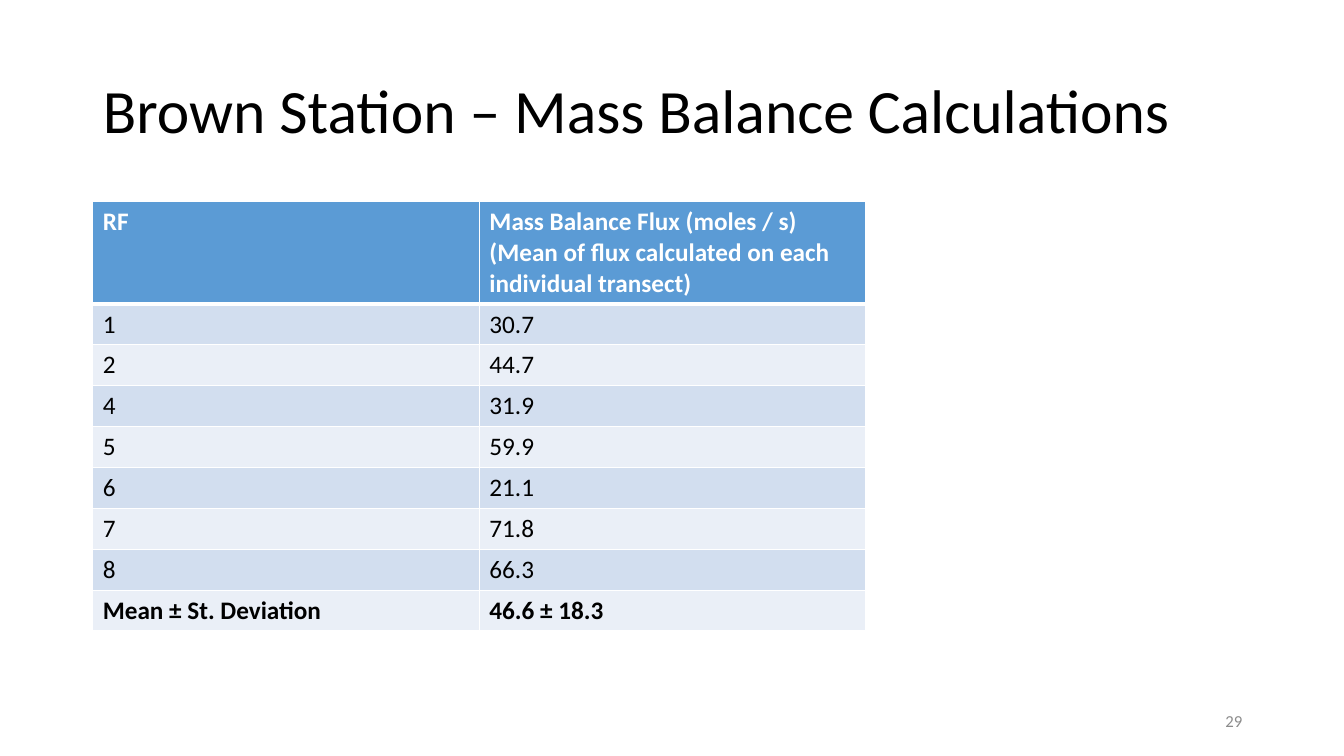
from pptx import Presentation
from pptx.dml.color import RGBColor
from pptx.enum.text import MSO_ANCHOR as Anchor, MSO_AUTO_SIZE as AutoSize, PP_ALIGN as Align
from pptx.oxml.ns import qn
from pptx.util import Inches, Pt
from lxml.etree import SubElement

COLORS = {
    "text": "000000",
    "white": "FFFFFF",
    "header": "5B9BD5",
    "odd_row": "D2DEEF",
    "even_row": "EAEFF7",
    "page_number": "8C8C8C",
}
FLUX_ROWS = [
    ("RF", "Mass Balance Flux (moles / s)\n(Mean of flux calculated on each individual transect)"),
    ("1", "30.7"),
    ("2", "44.7"),
    ("4", "31.9"),
    ("5", "59.9"),
    ("6", "21.1"),
    ("7", "71.8"),
    ("8", "66.3"),
    ("Mean ± St. Deviation", "46.6 ± 18.3"),
]


class SlideBuilder:
    """Holds the text style and the current slide."""

    def __init__(self, slide, font_name):
        self.slide = slide
        self.font_name = font_name

    def set_text(self, frame, text, size, color, bold=False, align=Align.LEFT):
        """Fill a text frame with uniformly styled paragraphs."""
        frame.text = text
        for paragraph in frame.paragraphs:
            paragraph.alignment = align
            font = paragraph.font
            font.name, font.size, font.bold = self.font_name, Pt(size), bold
            font.color.rgb = RGBColor.from_string(COLORS[color])

    def place(self, shape, left, top, width, height):
        """Position a shape in inches."""
        shape.left, shape.top = Inches(left), Inches(top)
        shape.width, shape.height = Inches(width), Inches(height)

    def title(self, text, *box):
        """Format the title placeholder."""
        shape = self.slide.shapes.title
        self.place(shape, *box)
        frame = shape.text_frame
        frame.auto_size = AutoSize.NONE
        frame.vertical_anchor = Anchor.MIDDLE
        self.set_text(frame, text, 44, "text")
        frame.paragraphs[0].line_spacing = 0.9

    def page_number(self, text, *box):
        """Add the right-aligned page number."""
        shape = self.slide.shapes.add_textbox(*map(Inches, box))
        frame = shape.text_frame
        frame.word_wrap = True
        frame.vertical_anchor = Anchor.MIDDLE
        self.set_text(frame, text, 12, "page_number", align=Align.RIGHT)

    def border(self, cell, side, width):
        """Draw a white line on one side of a cell."""
        properties = cell._tc.get_or_add_tcPr()
        line = SubElement(properties, qn(f"a:ln{side}"), w=str(Pt(width)))
        fill = SubElement(line, qn("a:solidFill"))
        SubElement(fill, qn("a:srgbClr"), val=COLORS["white"])

    def table(self, rows, left, top, width, header_height, row_height):
        """Add a banded table with a header and a bold summary row."""
        last = len(rows) - 1
        height = header_height + last * row_height
        box = map(Inches, (left, top, width, height))
        table = self.slide.shapes.add_table(len(rows), len(rows[0]), *box).table
        for index, values in enumerate(rows):
            header = index == 0
            table.rows[index].height = Inches(header_height if header else row_height)
            band = "header" if header else "odd_row" if index % 2 else "even_row"
            for column, text in enumerate(values):
                cell = table.cell(index, column)
                self.set_text(cell.text_frame, text, 18, "white" if header else "text",
                              bold=index in (0, last))
                for side in "LR":
                    self.border(cell, side, 1)
                self.border(cell, "T", 3 if index == 1 else 1)
                self.border(cell, "B", 3 if header else 1)
                cell.fill.solid()
                cell.fill.fore_color.rgb = RGBColor.from_string(COLORS[band])


def main():
    """Build and save the presentation."""
    presentation = Presentation()
    presentation.slide_width, presentation.slide_height = Inches(13.33), Inches(7.5)
    slide = presentation.slides.add_slide(presentation.slide_layouts[5])
    builder = SlideBuilder(slide, "Calibri")
    builder.title("Brown Station – Mass Balance Calculations", 0.92, 0.4, 11.5, 1.45)
    builder.table(FLUX_ROWS, 0.92, 2, 7.67, header_height=1, row_height=0.405)
    builder.page_number("29", 9.42, 6.95, 3, 0.4)
    presentation.save("out.pptx")


if __name__ == "__main__":
    main()
